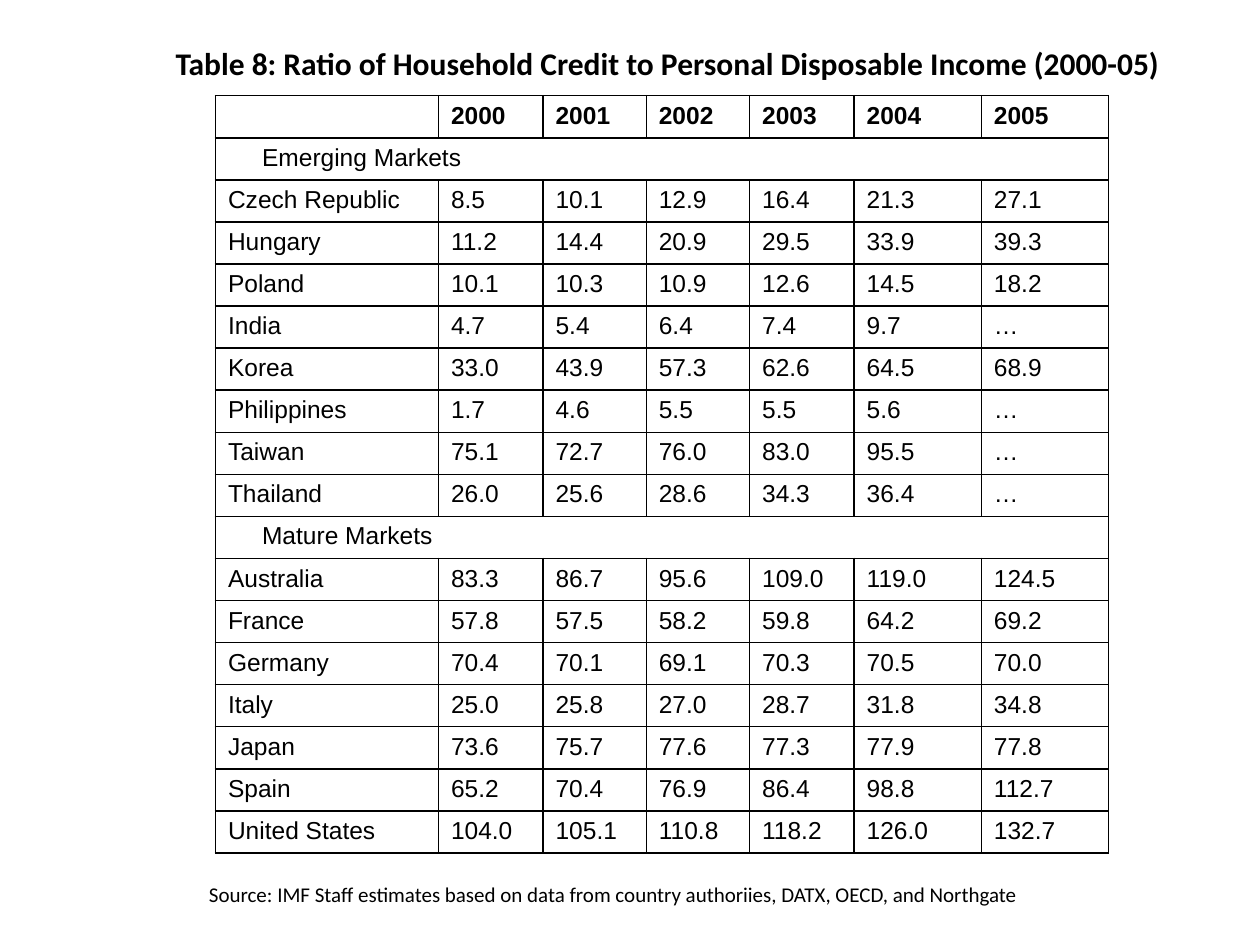
"""Build a slide with a table of household credit ratios by country, 2000-05."""
import pptx
import pptx.dml.color
import pptx.enum.text
import pptx.oxml
import pptx.oxml.ns
import pptx.util
from lxml import etree

Inches = pptx.util.Inches
ALIGN = pptx.enum.text.PP_ALIGN
BLACK = pptx.dml.color.RGBColor(0, 0, 0)
COLUMN_WIDTHS = [1.77, 0.83, 0.82, 0.82, 0.83, 1.01, 1.01]
TABLE_HEIGHT = 6
ROWS = [
    ["", "2000", "2001", "2002", "2003", "2004", "2005"],
    ["Emerging Markets"],
    ["Czech Republic", "8.5", "10.1", "12.9", "16.4", "21.3", "27.1"],
    ["Hungary", "11.2", "14.4", "20.9", "29.5", "33.9", "39.3"],
    ["Poland", "10.1", "10.3", "10.9", "12.6", "14.5", "18.2"],
    ["India", "4.7", "5.4", "6.4", "7.4", "9.7", "…"],
    ["Korea", "33.0", "43.9", "57.3", "62.6", "64.5", "68.9"],
    ["Philippines", "1.7", "4.6", "5.5", "5.5", "5.6", "…"],
    ["Taiwan", "75.1", "72.7", "76.0", "83.0", "95.5", "…"],
    ["Thailand", "26.0", "25.6", "28.6", "34.3", "36.4", "…"],
    ["Mature Markets"],
    ["Australia", "83.3", "86.7", "95.6", "109.0", "119.0", "124.5"],
    ["France", "57.8", "57.5", "58.2", "59.8", "64.2", "69.2"],
    ["Germany", "70.4", "70.1", "69.1", "70.3", "70.5", "70.0"],
    ["Italy", "25.0", "25.8", "27.0", "28.7", "31.8", "34.8"],
    ["Japan", "73.6", "75.7", "77.6", "77.3", "77.9", "77.8"],
    ["Spain", "65.2", "70.4", "76.9", "86.4", "98.8", "112.7"],
    ["United States", "104.0", "105.1", "110.8", "118.2", "126.0", "132.7"],
]


def write_text(frame, text, size, font="Calibri", bold=False, align=ALIGN.JUSTIFY, indent=0):
    para = frame.paragraphs[0]
    para.alignment = align
    if indent:
        para._p.get_or_add_pPr().set("marL", str(Inches(indent)))
    if not text:
        etree.SubElement(para._p, pptx.oxml.ns.qn("a:endParaRPr"), sz=str(size * 100))
        return
    span = para.add_run()
    span.text = text
    span.font.name = font
    span.font.size = pptx.util.Pt(size)
    span.font.bold = bold
    span.font.color.rgb = BLACK


def add_borders(cell):
    properties = cell._tc.get_or_add_tcPr()
    for position, side in enumerate(("lnL", "lnR", "lnT", "lnB")):
        border = pptx.oxml.parse_xml(
            f'<a:{side} {pptx.oxml.ns.nsdecls("a")} w="12700"><a:solidFill>'
            f'<a:srgbClr val="{BLACK}"/></a:solidFill></a:{side}>'
        )
        properties.insert(position, border)


deck = pptx.Presentation()
deck.slide_width = Inches(10)
deck.slide_height = Inches(7.5)
page = deck.slides.add_slide(deck.slide_layouts[6])

captions = [
    ("Table 8: Ratio of Household Credit to Personal Disposable Income (2000-05)",
     (1.26, 0.29, 8.08, 0.41), {"size": 18, "bold": True, "align": ALIGN.CENTER}),
    ("Source: IMF Staff estimates based on data from country authoriies, DATX, OECD, and Northgate",
     (1.56, 6.95, 7.38, 0.3), {"size": 12}),
]
for text, place, text_format in captions:
    box = page.shapes.add_textbox(*map(Inches, place))
    box.text_frame.word_wrap = False
    box.text_frame.vertical_anchor = pptx.enum.text.MSO_ANCHOR.MIDDLE
    write_text(box.text_frame, text, **text_format)

table = page.shapes.add_table(
    len(ROWS), len(COLUMN_WIDTHS), Inches(1.71), Inches(0.76),
    Inches(sum(COLUMN_WIDTHS)), Inches(TABLE_HEIGHT),
).table
table.first_row = False
table.horz_banding = False
for column, width in zip(table.columns, COLUMN_WIDTHS):
    column.width = Inches(width)

for row_index, values in enumerate(ROWS):
    table.rows[row_index].height = Inches(TABLE_HEIGHT / len(ROWS))
    is_section = len(values) == 1
    for column_index in range(len(COLUMN_WIDTHS)):
        cell = table.cell(row_index, column_index)
        cell.fill.background()
        add_borders(cell)
    if is_section:
        table.cell(row_index, 0).merge(table.cell(row_index, len(COLUMN_WIDTHS) - 1))
    for column_index, value in enumerate(values):
        write_text(table.cell(row_index, column_index).text_frame, value, 14, font="Arial",
                   bold=row_index == 0, indent=0.27 if is_section else 0)

deck.save("out.pptx")
